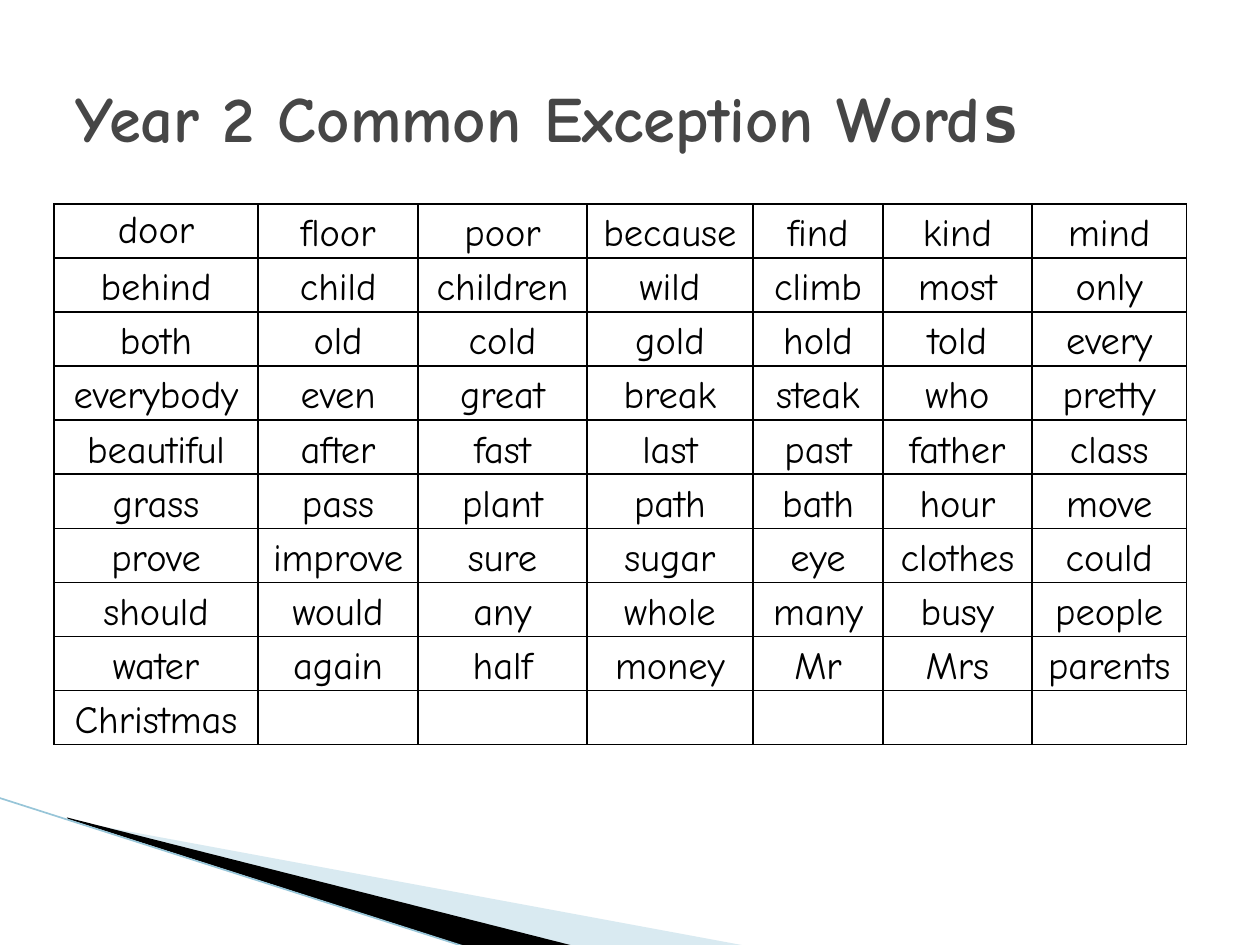
from dataclasses import dataclass

from lxml.etree import SubElement
from pptx import Presentation
from pptx.dml.color import RGBColor
from pptx.enum.shapes import MSO_CONNECTOR
from pptx.enum.text import MSO_ANCHOR, PP_ALIGN
from pptx.oxml import parse_xml
from pptx.oxml.ns import nsdecls, qn
from pptx.util import Cm, Pt


@dataclass(frozen=True)
class Theme:
    title_color: str = "464646"
    word_color: str = "000000"
    border_color: str = "000000"
    pale_wedge: str = "A0CBDC"
    dark_wedge: str = "000000"
    edge_line: str = "97C5D8"
    main_font: str = "Comic Neue"
    last_letter_font: str = "DejaVu Sans Mono"
    title_size: float = 36.9
    word_size: float = 22
    border_width: float = 1
    edge_width: float = 0.95


class SlideBuilder:
    def __init__(self, slide, theme):
        self.shapes = slide.shapes
        self.theme = theme

    def style(self, run, font, size, color, bold=False):
        run.font.name = font
        run.font.size = Pt(size)
        run.font.bold = bold
        run.font.color.rgb = RGBColor.from_string(color)

    def wedge(self, points, color, opacity=100):
        start, *others = [(Cm(x), Cm(y)) for x, y in points]
        outline = self.shapes.build_freeform(*start)
        outline.add_line_segments(others, close=True)
        wedge = outline.convert_to_shape()
        wedge.shadow.inherit = False
        wedge.line.fill.background()
        wedge.fill.solid()
        wedge.fill.fore_color.rgb = RGBColor.from_string(color)
        if opacity < 100:
            tint = wedge.fill._xPr.find(".//" + qn("a:srgbClr"))
            SubElement(tint, qn("a:alpha"), val=str(opacity * 1000))

    def line(self, start, end, color, width):
        ends = [Cm(value) for value in (*start, *end)]
        edge = self.shapes.add_connector(MSO_CONNECTOR.STRAIGHT, *ends)
        edge.line.color.rgb = RGBColor.from_string(color)
        edge.line.width = Pt(width)
        SubElement(edge._element.spPr, qn("a:effectLst"))

    def title(self, parts, left, top, width, height):
        heading = self.shapes.add_textbox(Cm(left), Cm(top), Cm(width), Cm(height))
        frame = heading.text_frame
        frame.word_wrap = True
        frame.vertical_anchor = MSO_ANCHOR.MIDDLE
        for text, font in parts:
            run = frame.paragraphs[0].add_run()
            run.text = text
            self.style(run, font, self.theme.title_size, self.theme.title_color, True)

    def table(self, rows, left, top, widths, row_height):
        grid = self.shapes.add_table(
            len(rows), len(widths), Cm(left), Cm(top),
            Cm(sum(widths)), Cm(row_height * len(rows)),
        ).table
        grid.first_row = False
        grid.horz_banding = False
        for column, width in zip(grid.columns, widths):
            column.width = Cm(width)
        for row, words in zip(grid.rows, rows):
            row.height = Cm(row_height)
            for cell, word in zip(row.cells, words):
                self.word(cell, word)
            for cell in row.cells:
                self.borders(cell)
        grid.cell(0, 0).text_frame.paragraphs[0].line_spacing = 1.0

    def word(self, cell, word):
        cell.vertical_anchor = MSO_ANCHOR.MIDDLE
        cell.margin_left = cell.margin_right = Cm(0.15)
        cell.margin_top = cell.margin_bottom = 0
        paragraph = cell.text_frame.paragraphs[0]
        paragraph.text = word
        paragraph.alignment = PP_ALIGN.CENTER
        paragraph.line_spacing = 1.15
        self.style(paragraph.runs[0], self.theme.main_font,
                   self.theme.word_size, self.theme.word_color)

    def borders(self, cell):
        cell.fill.background()
        properties = cell._tc.get_or_add_tcPr()
        for position, side in enumerate("LRTB"):
            properties.insert(position, parse_xml(
                f'<a:ln{side} {nsdecls("a")} w="{Pt(self.theme.border_width)}">'
                f'<a:solidFill><a:srgbClr val="{self.theme.border_color}"/></a:solidFill>'
                f'</a:ln{side}>'
            ))


WORD_ROWS = [
    "door floor poor because find kind mind",
    "behind child children wild climb most only",
    "both old cold gold hold told every",
    "everybody even great break steak who pretty",
    "beautiful after fast last past father class",
    "grass pass plant path bath hour move",
    "prove improve sure sugar eye clothes could",
    "should would any whole many busy people",
    "water again half money Mr Mrs parents",
    "Christmas",
]
COLUMN_WIDTHS = [4.11, 3.23, 3.4, 3.35, 2.62, 3, 3.12]


def main():
    deck = Presentation()
    deck.slide_width, deck.slide_height = Cm(25.4), Cm(19.05)
    theme = Theme()
    page = SlideBuilder(deck.slides.add_slide(deck.slide_layouts[6]), theme)
    page.wedge([(1.4, 16.54), (15.11, 19.08), (11.58, 19.08), (1.4, 16.51)],
               theme.pale_wedge, 40)
    page.wedge([(1.35, 16.48), (11.61, 19.08), (9.45, 19.1), (1.37, 16.51)],
               theme.dark_wedge)
    page.line((-0.03, 16.08), (9.42, 19.1), theme.edge_line, theme.edge_width)
    page.table([row.split() for row in WORD_ROWS], 1.09, 4.11, COLUMN_WIDTHS, 1.09)
    page.title([("Year 2 Common Exception Word", theme.main_font),
                ("s", theme.last_letter_font)], 1.27, 0.76, 22.86, 3.18)
    deck.save("out.pptx")


if __name__ == "__main__":
    main()
